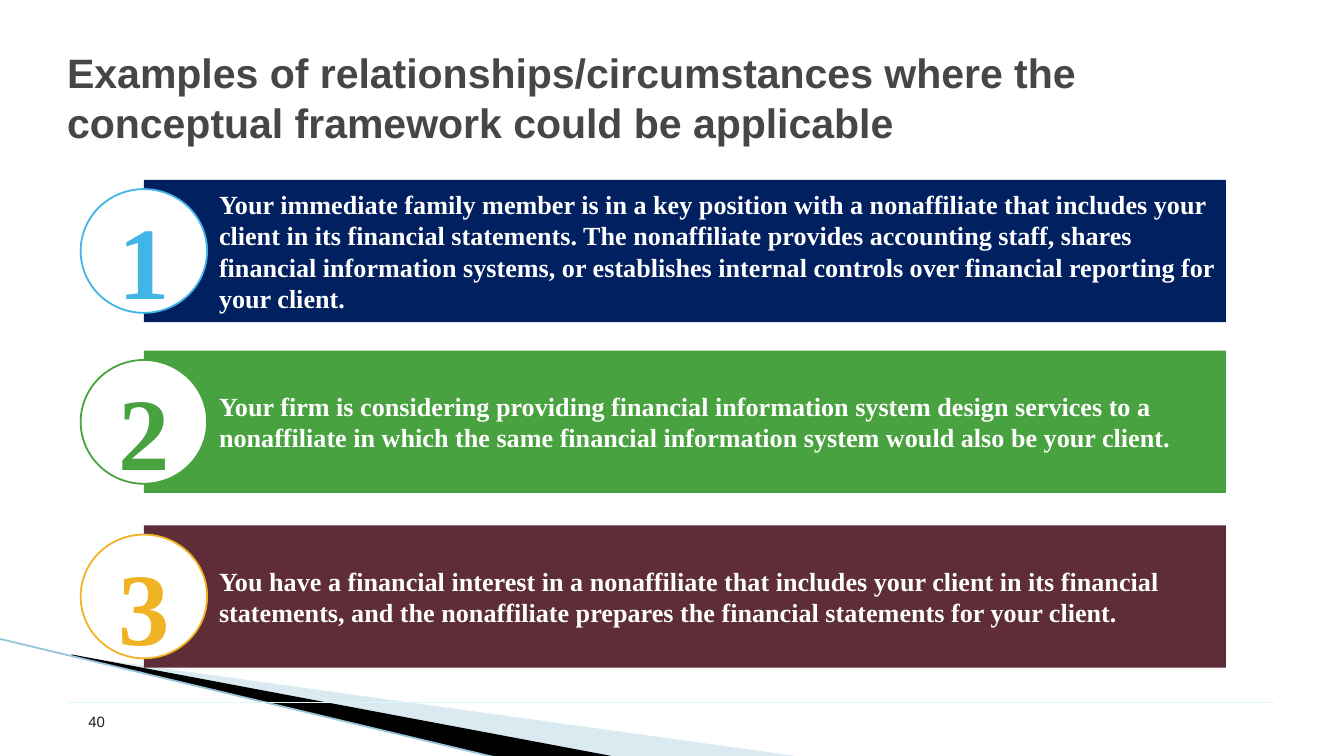
from lxml.etree import SubElement
from pptx import Presentation
from pptx.dml.color import RGBColor
from pptx.enum.shapes import MSO_CONNECTOR, MSO_SHAPE
from pptx.enum.text import MSO_ANCHOR, PP_ALIGN
from pptx.oxml.ns import qn
from pptx.util import Cm, Pt

COLORS = {
    "title": "464646",
    "page": "1D1D1D",
    "white": "FFFFFF",
    "black": "000000",
    "pale_wedge": "A0CBDC",
    "slant": "97C5D8",
    "footer": "DEF5FA",
    "navy": "002060",
    "green": "48A23F",
    "maroon": "5E2D37",
    "sky": "41B6E6",
    "gold": "F0B323",
}
SANS, SERIF = "Arial", "Times New Roman"
BAR_LEFT, BAR_WIDTH, BAR_HEIGHT = 2.72, 20.45, 2.69
CIRCLE_WIDTH, CIRCLE_HEIGHT = 2.39, 2.34
EXAMPLES = [
    (3.4, "navy", "sky",
     "Your immediate family member is in a key position with a nonaffiliate that "
     "includes your client in its financial statements. The nonaffiliate provides "
     "accounting staff, shares financial information systems, or establishes internal "
     "controls over financial reporting for your client."),
    (6.63, "green", "green",
     "Your firm is considering providing financial information system design services "
     "to a nonaffiliate in which the same financial information system would also be "
     "your client."),
    (9.93, "maroon", "gold",
     "You have a financial interest in a nonaffiliate that includes your client in its "
     "financial statements, and the nonaffiliate prepares the financial statements for "
     "your client."),
]


def rgb(name):
    """Return the named palette colour."""
    return RGBColor.from_string(COLORS[name])


def write(shape, text, size, font, color, bold=True, insets=(0, 0, 0, 0),
          anchor=MSO_ANCHOR.MIDDLE, align=PP_ALIGN.LEFT):
    """Put one formatted paragraph in a shape and return it."""
    frame = shape.text_frame
    frame.text = text
    frame.word_wrap = True
    frame.vertical_anchor = anchor
    (frame.margin_left, frame.margin_top,
     frame.margin_right, frame.margin_bottom) = map(Cm, insets)
    paragraph = frame.paragraphs[0]
    paragraph.alignment = align
    run_font = paragraph.runs[0].font
    run_font.size, run_font.name, run_font.bold = Pt(size), font, bold
    run_font.color.rgb = rgb(color)
    return paragraph


def fill_flat(shape, color, outline=None):
    """Give a shape a solid fill, no shadow and an optional thin outline."""
    shape.shadow.inherit = False
    shape.fill.solid()
    shape.fill.fore_color.rgb = rgb(color)
    if outline:
        shape.line.color.rgb = rgb(outline)
        shape.line.width = Pt(0.96)
    else:
        shape.line.fill.background()


def add_wedge(slide, points, color, opacity=None):
    """Draw a filled corner wedge through the points."""
    start, *rest = [(Cm(x), Cm(y)) for x, y in points]
    builder = slide.shapes.build_freeform(*start)
    builder.add_line_segments(rest)
    wedge = builder.convert_to_shape()
    fill_flat(wedge, color)
    if opacity:
        tint = wedge.fill._xPr.find(qn("a:solidFill"))[0]
        SubElement(tint, qn("a:alpha")).set("val", str(opacity * 1000))


def add_rule(slide, start, end, color, width):
    """Draw a straight line without shadow."""
    rule = slide.shapes.add_connector(
        MSO_CONNECTOR.STRAIGHT, *map(Cm, start), *map(Cm, end))
    rule.line.color.rgb = rgb(color)
    rule.line.width = Pt(width)
    SubElement(rule._element.spPr, qn("a:effectLst"))


def add_label(slide, box, text, size, color, **style):
    """Add a text box in the sans font."""
    label = slide.shapes.add_textbox(*map(Cm, box))
    write(label, text, size, SANS, color, **style)


def add_bar(slide, top, color, text):
    """Draw the coloured bar that holds one example."""
    bar = slide.shapes.add_shape(
        MSO_SHAPE.RECTANGLE, *map(Cm, (BAR_LEFT, top, BAR_WIDTH, BAR_HEIGHT)))
    fill_flat(bar, color)
    paragraph = write(bar, text, 14, SERIF, "white", insets=(0.15,) * 4)
    paragraph.level = 1
    properties = paragraph._p.get_or_add_pPr()
    properties.set("marL", str(Cm(1.27)))
    properties.set("indent", "0")


def add_number(slide, bar_top, color, number):
    """Draw the numbered circle centred on the left edge of a bar."""
    left = BAR_LEFT - CIRCLE_WIDTH / 2
    top = bar_top + (BAR_HEIGHT - CIRCLE_HEIGHT) / 2
    circle = slide.shapes.add_shape(
        MSO_SHAPE.OVAL, *map(Cm, (left, top, CIRCLE_WIDTH, CIRCLE_HEIGHT)))
    fill_flat(circle, "white", color)
    write(circle, str(number), 55, SERIF, color,
          insets=(0, 0.3, 0, 0), align=PP_ALIGN.CENTER)


def main():
    """Build the slide and save it."""
    deck = Presentation()
    deck.slide_width, deck.slide_height = Cm(25.4), Cm(14.29)
    slide = deck.slides.add_slide(deck.slide_layouts[6])

    add_wedge(slide, [(1.4, 12.4), (15.11, 14.3), (11.58, 14.3)], "pale_wedge", 40)
    add_wedge(slide, [(1.35, 12.37), (11.61, 14.3), (9.45, 14.33), (1.37, 12.4)], "black")
    add_rule(slide, (-0.03, 12.07), (9.42, 14.33), "slant", 0.95)
    add_rule(slide, (1.27, 13.28), (24.1, 13.28), "footer", 0.5)
    add_label(slide, (1.27, 0.64, 22.86, 2.39),
              "Examples of relationships/circumstances where the conceptual framework "
              "could be applicable", 22, "title")

    for top, bar_color, _, text in EXAMPLES:
        add_bar(slide, top, bar_color, text)
    for number, (top, _, number_color, _) in enumerate(EXAMPLES, start=1):
        add_number(slide, top, number_color, number)

    add_label(slide, (1.42, 13.34, 1.07, 0.61), "40", 8, "page", bold=False,
              insets=(0.25, 0.13, 0.25, 0.13), anchor=MSO_ANCHOR.TOP)
    deck.save("out.pptx")


if __name__ == "__main__":
    main()
